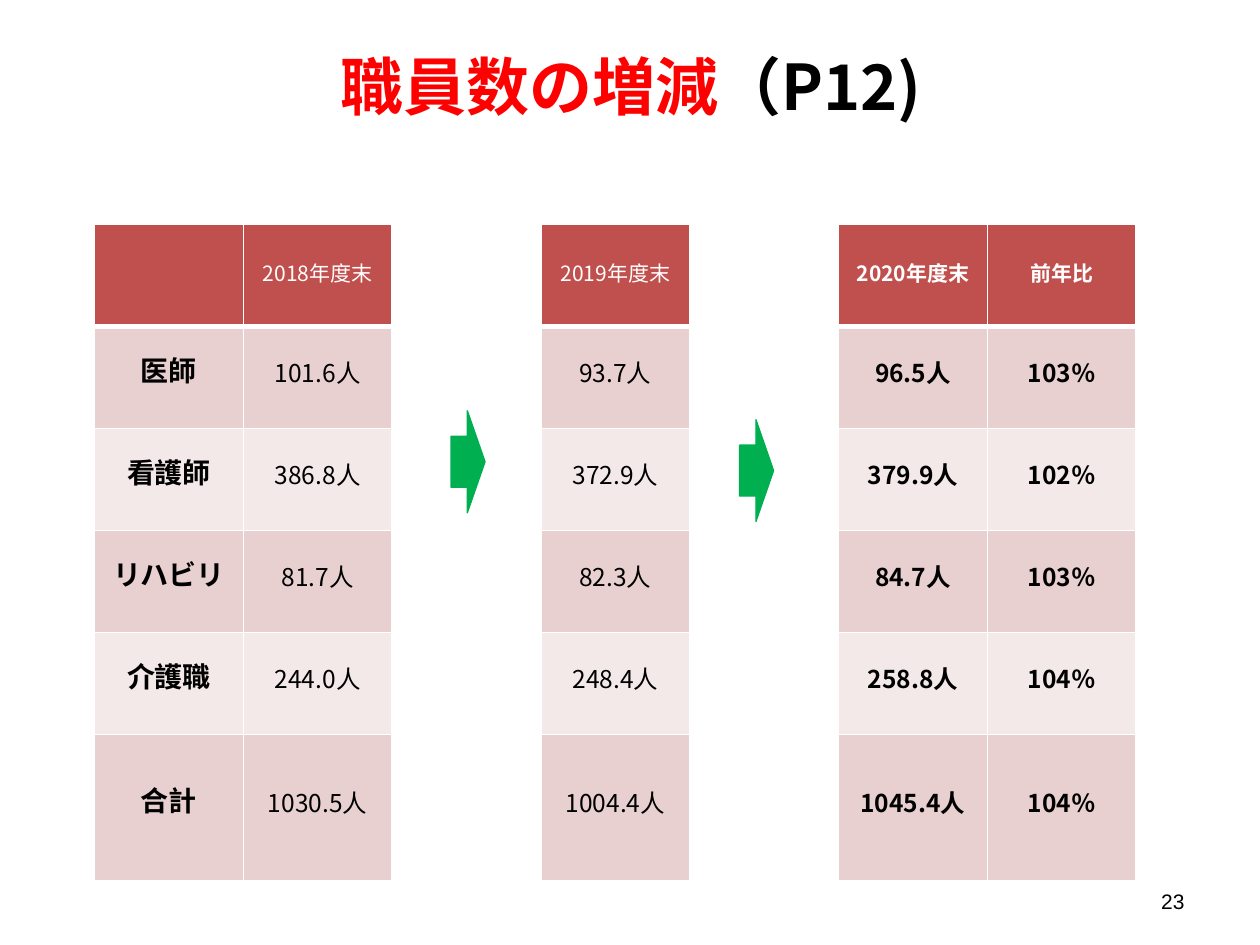
from lxml.etree import SubElement
from pptx import Presentation
from pptx.dml.color import RGBColor
from pptx.enum.shapes import MSO_SHAPE
from pptx.enum.text import MSO_ANCHOR, PP_ALIGN
from pptx.oxml import parse_xml
from pptx.oxml.ns import nsdecls, qn
from pptx.util import Inches, Pt

WHITE = RGBColor(0xFF, 0xFF, 0xFF)
BLACK = RGBColor(0, 0, 0)
RED = RGBColor(0xFF, 0, 0)
GREEN = RGBColor(0, 0xB0, 0x50)
HEADER = RGBColor(0xC0, 0x50, 0x4D)
BANDS = RGBColor(0xE8, 0xD0, 0xD0), RGBColor(0xF4, 0xE9, 0xE9)

JAPANESE = "Noto Sans CJK JP"
COLUMN_WIDTH = 8.27 / 7
ROW_HEIGHTS = [0.81] * 5 + [1.16]
GAP_COLUMNS = 2, 4
BOLD_COLUMNS = 0, 5, 6

STAFF = [
    ["", "2018年度末", "", "2019年度末", "", "2020年度末", "前年比"],
    ["医師", "101.6人", "", "93.7人", "", "96.5人", "103％"],
    ["看護師", "386.8人", "", "372.9人", "", "379.9人", "102％"],
    ["リハビリ", "81.7人", "", "82.3人", "", "84.7人", "103％"],
    ["介護職", "244.0人", "", "248.4人", "", "258.8人", "104％"],
    ["合計", "1030.5人", "", "1004.4人", "", "1045.4人", "104％"],
]


def style_font(font, size, color, bold=False, name=JAPANESE):
    font.size = Pt(size)
    font.bold = bold
    font.name = name
    font.color.rgb = color


def set_east_asian(para):
    latin = para.font._element.find(qn("a:latin"))
    latin.addnext(parse_xml(f'<a:ea {nsdecls("a")} typeface="{JAPANESE}"/>'))


def add_text(page, left, top, width, height, align):
    box = page.shapes.add_textbox(Inches(left), Inches(top), Inches(width), Inches(height))
    box.text_frame.word_wrap = True
    box.text_frame.vertical_anchor = MSO_ANCHOR.MIDDLE
    para = box.text_frame.paragraphs[0]
    para.alignment = align
    return para


def add_title(page):
    para = add_text(page, 0.28, 0.28, 9.45, 0.79, PP_ALIGN.CENTER)
    style_font(para.font, 36, BLACK, True)
    set_east_asian(para)
    for text, color in (("職員数の増減", RED), ("（P12)", BLACK)):
        span = para.add_run()
        span.text = text
        span.font.color.rgb = color


def add_page_number(page):
    para = add_text(page, 7.17, 6.95, 2.33, 0.4, PP_ALIGN.RIGHT)
    para.text = "23"
    style_font(para.font, 12, BLACK, name="Arial")


def set_borders(cell, top, bottom):
    widths = {"lnL": 1, "lnR": 1, "lnT": top, "lnB": bottom}
    properties = cell._tc.get_or_add_tcPr()
    for index, (side, width) in enumerate(widths.items()):
        properties.insert(index, parse_xml(
            f'<a:{side} {nsdecls("a")} w="{Pt(width)}"><a:solidFill>'
            f'<a:srgbClr val="{WHITE}"/></a:solidFill></a:{side}>'))


def fill_cell(cell, text, row, column):
    cell.vertical_anchor = MSO_ANCHOR.MIDDLE
    cell.margin_left = cell.margin_right = Inches(0.07)
    cell.margin_top = cell.margin_bottom = 0
    if column in GAP_COLUMNS:
        cell.fill.background()
    else:
        cell.fill.solid()
        cell.fill.fore_color.rgb = BANDS[(row - 1) % 2] if row else HEADER
    set_borders(cell, 3 if row == 1 else 1, 1 if row else 3)
    para = cell.text_frame.paragraphs[0]
    para.text = text
    para.alignment = PP_ALIGN.CENTER
    para.line_spacing = Pt(14)
    size = 12 if row == 0 else 16 if column == 0 else 14
    style_font(para.font, size, BLACK if row else WHITE, column in BOLD_COLUMNS)
    set_east_asian(para)


def add_staff_table(page):
    frame = page.shapes.add_table(
        len(STAFF), len(STAFF[0]), Inches(0.75), Inches(1.78),
        Inches(COLUMN_WIDTH * len(STAFF[0])), Inches(sum(ROW_HEIGHTS)))
    table = frame.table
    table.first_row = table.horz_banding = False
    for column in table.columns:
        column.width = Inches(COLUMN_WIDTH)
    for row, values in enumerate(STAFF):
        table.rows[row].height = Inches(ROW_HEIGHTS[row])
        for column, text in enumerate(values):
            fill_cell(table.cell(row, column), text, row, column)


def add_arrow(page, left, top):
    arrow = page.shapes.add_shape(
        MSO_SHAPE.RIGHT_ARROW, Inches(left), Inches(top), Inches(0.27), Inches(0.81))
    arrow.adjustments[0] = 0.5
    arrow.adjustments[1] = 0.52
    arrow.shadow.inherit = False
    arrow.fill.solid()
    arrow.fill.fore_color.rgb = GREEN
    arrow.line.color.rgb = GREEN
    arrow.line.width = Pt(0.75)


def main():
    deck = Presentation()
    deck.slide_width, deck.slide_height = Inches(10), Inches(7.5)
    page = deck.slides.add_slide(deck.slide_layouts[6])
    add_page_number(page)
    add_title(page)
    add_staff_table(page)
    add_arrow(page, 5.87, 3.33)
    add_arrow(page, 3.58, 3.26)
    deck.save("out.pptx")


if __name__ == "__main__":
    main()
